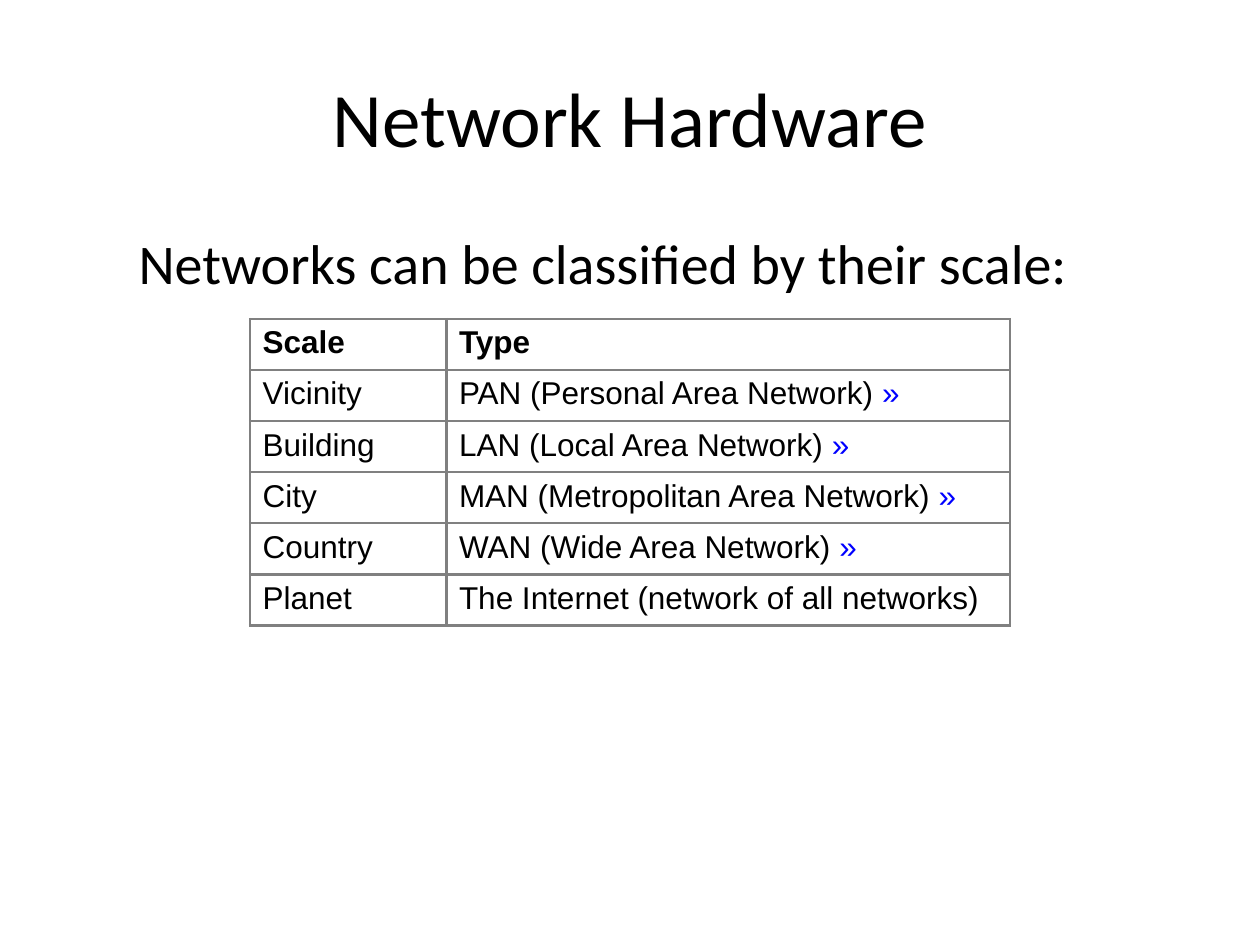
from lxml.etree import SubElement
from pptx import Presentation
from pptx.dml.color import RGBColor
from pptx.enum.text import MSO_ANCHOR as Anchor, PP_ALIGN as Align
from pptx.oxml import parse_xml
from pptx.oxml.ns import nsdecls, qn
from pptx.util import Cm, Pt

BLACK, BLUE, GRAY = "000000", "0000FF", "808080"
TITLE_FORMAT = {"name": "Calibri", "size": Pt(44)}
BODY_FORMAT = {"name": "Calibri", "size": Pt(32)}
CELL_FORMAT = {"name": "Arial", "size": Pt(18), "bold": False}
HEADER_FORMAT = {**CELL_FORMAT, "bold": True}

MARK = "»"
ROWS = [
    ("Scale", "Type"),
    ("Vicinity", "PAN (Personal Area Network) »"),
    ("Building", "LAN (Local Area Network) »"),
    ("City", "MAN (Metropolitan Area Network) »"),
    ("Country", "WAN (Wide Area Network) »"),
    ("Planet", "The Internet (network of all networks)"),
]
COLUMN_WIDTHS = [Cm(3.96), Cm(11.36)]
ROW_HEIGHT = Cm(1.03)


def add_span(para, text, font_format, color=BLACK):
    span = para.add_run()
    span.text = text
    for name, value in font_format.items():
        setattr(span.font, name, value)
    span.font.color.rgb = RGBColor.from_string(color)


def place(box, left, top, width, height):
    box.left, box.top, box.width, box.height = map(Cm, (left, top, width, height))


def fill_title(box, text):
    place(box, 1.27, 0.76, 22.86, 3.18)
    box.text_frame.vertical_anchor = Anchor.MIDDLE
    para = box.text_frame.paragraphs[0]
    para.alignment = Align.CENTER
    add_span(para, text, TITLE_FORMAT)


def fill_body(box, text):
    """Write one unbulleted line with a hanging indent."""
    place(box, 2.54, 4.47, 21.64, 12.78)
    para = box.text_frame.paragraphs[0]
    add_span(para, text, BODY_FORMAT)
    properties = para._p.get_or_add_pPr()
    indent = Cm(0.95)
    properties.set("marL", str(indent))
    properties.set("indent", str(-indent))
    SubElement(properties, qn("a:buNone"))


def set_borders(cell, color, width):
    properties = cell._tc.get_or_add_tcPr()
    for index, side in enumerate(("lnL", "lnR", "lnT", "lnB")):
        properties.insert(index, parse_xml(
            f'<a:{side} {nsdecls("a")} w="{width}"><a:solidFill>'
            f'<a:srgbClr val="{color}"/></a:solidFill></a:{side}>'))


def fill_cell(cell, text, font_format):
    """Write the text, with a closing mark in blue."""
    cell.fill.background()
    set_borders(cell, GRAY, Pt(1.5))
    para = cell.text_frame.paragraphs[0]
    add_span(para, text.removesuffix(MARK), font_format)
    if text.endswith(MARK):
        add_span(para, MARK, font_format, BLUE)


def add_scale_table(page):
    table = page.shapes.add_table(
        len(ROWS), len(COLUMN_WIDTHS), Cm(5.04), Cm(6.43),
        sum(COLUMN_WIDTHS), ROW_HEIGHT * len(ROWS)).table
    table.horz_banding = False
    for column, width in zip(table.columns, COLUMN_WIDTHS):
        column.width = width
    for row_index, (row, texts) in enumerate(zip(table.rows, ROWS)):
        row.height = ROW_HEIGHT
        font_format = CELL_FORMAT if row_index else HEADER_FORMAT
        for cell, text in zip(row.cells, texts):
            fill_cell(cell, text, font_format)


def main():
    deck = Presentation()
    deck.slide_width, deck.slide_height = Cm(25.4), Cm(19.05)
    page = deck.slides.add_slide(deck.slide_layouts[1])
    fill_title(page.shapes.title, "Network Hardware")
    fill_body(page.placeholders[1], "Networks can be classified by their scale:")
    add_scale_table(page)
    deck.save("out.pptx")


if __name__ == "__main__":
    main()
